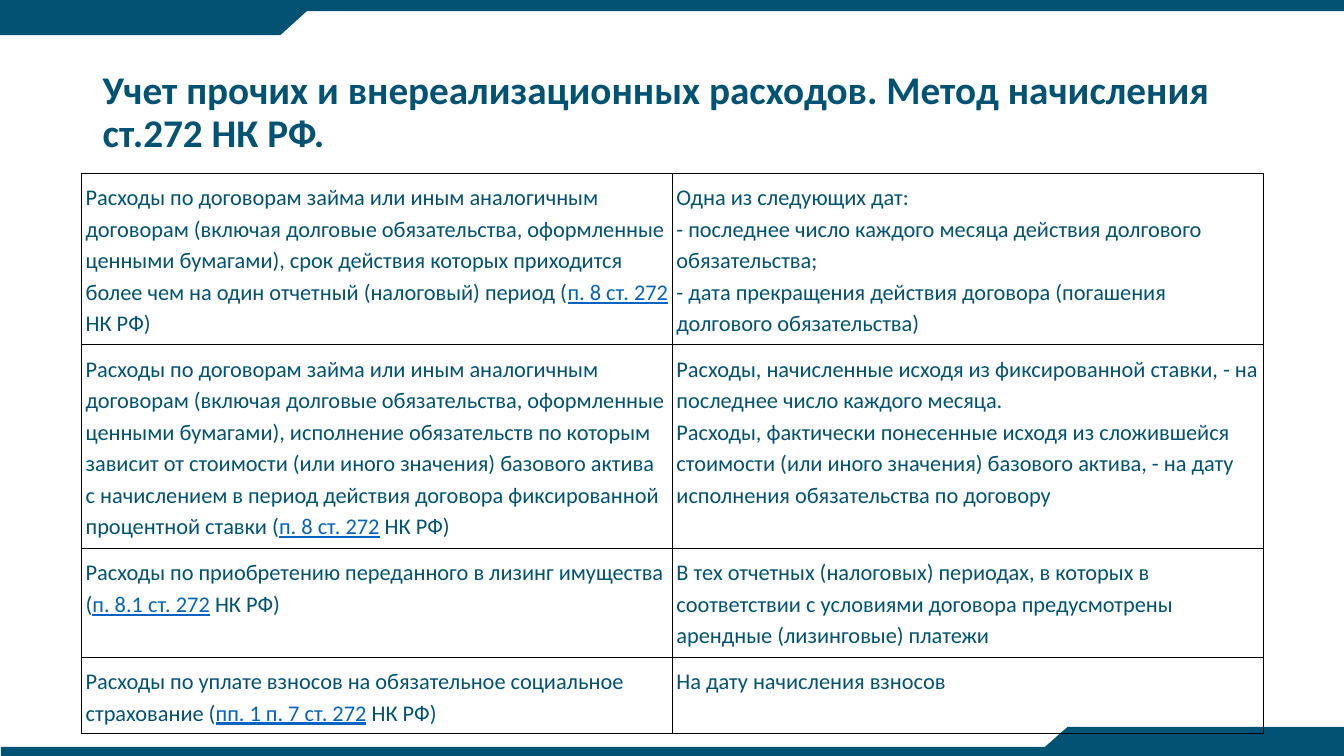
import pptx
import pptx.util
import pptx.dml.color
import pptx.enum.shapes
import pptx.enum.text
import pptx.oxml
import pptx.oxml.ns
from pptx.util import Inches

FONT = "Calibri"
TEAL = "025373"
LINK = "0563C1"
BLACK = "000000"
LINK_TAIL = " НК РФ)"

# Each row: height, expense text, linked article, paragraphs on the recognition date
ROWS = [
    (1.7,
     "Расходы по договорам займа или иным аналогичным договорам (включая долговые "
     "обязательства, оформленные ценными бумагами), срок действия которых приходится "
     "более чем на один отчетный (налоговый) период (",
     "п. 8 ст. 272",
     ["Одна из следующих дат:",
      "- последнее число каждого месяца действия долгового обязательства;",
      "- дата прекращения действия договора (погашения долгового обязательства)"]),
    (2.02,
     "Расходы по договорам займа или иным аналогичным договорам (включая долговые "
     "обязательства, оформленные ценными бумагами), исполнение обязательств по которым "
     "зависит от стоимости (или иного значения) базового актива с начислением в период "
     "действия договора фиксированной процентной ставки (",
     "п. 8 ст. 272",
     ["Расходы, начисленные исходя из фиксированной ставки, - на последнее число "
      "каждого месяца.",
      "Расходы, фактически понесенные исходя из сложившейся стоимости (или иного "
      "значения) базового актива, - на дату исполнения обязательства по договору"]),
    (1.08,
     "Расходы по приобретению переданного в лизинг имущества (",
     "п. 8.1 ст. 272",
     ["В тех отчетных (налоговых) периодах, в которых в соответствии с условиями "
      "договора предусмотрены арендные (лизинговые) платежи"]),
    (0.76,
     "Расходы по уплате взносов на обязательное социальное страхование (",
     "пп. 1 п. 7 ст. 272",
     ["На дату начисления взносов"]),
]


def colour(value):
    return pptx.dml.color.RGBColor.from_string(value)


def style_span(span, size, value=TEAL, bold=False, underline=False):
    span.font.name = FONT
    span.font.size = pptx.util.Pt(size)
    span.font.color.rgb = colour(value)
    span.font.bold = bold
    span.font.underline = underline


def add_block(page, kind, left, top, width, height, rotation=0):
    block = page.shapes.add_shape(
        kind, Inches(left), Inches(top), Inches(width), Inches(height))
    block.rotation = rotation
    block.shadow.inherit = False
    block.fill.solid()
    block.fill.fore_color.rgb = colour(TEAL)
    block.line.fill.background()


def add_bands(page):
    shapes = pptx.enum.shapes.MSO_SHAPE
    # Thin bars along the top and bottom edges
    add_block(page, shapes.RECTANGLE, 0, 0, 13.33, 0.11)
    add_block(page, shapes.RECTANGLE, 0.01, 7.41, 13.32, 0.09)
    # Corner tabs with slanted ends
    add_block(page, shapes.RECTANGLE, 0, 0.05, 2.78, 0.3)
    add_block(page, shapes.FLOWCHART_MERGE, 2.45, 0.05, 0.66, 0.3)
    add_block(page, shapes.RECTANGLE, 10.59, 7.21, 2.74, 0.29)
    add_block(page, shapes.FLOWCHART_MERGE, 10.26, 7.21, 0.66, 0.29, 180)


def add_title(page, text):
    box = page.shapes.add_textbox(Inches(0.92), Inches(0.4), Inches(11.5), Inches(1.45))
    frame = box.text_frame
    frame.word_wrap = True
    frame.vertical_anchor = pptx.enum.text.MSO_ANCHOR.MIDDLE
    frame.text = text
    para = frame.paragraphs[0]
    para.line_spacing = 0.9
    style_span(para.runs[0], 28, bold=True)


def set_borders(cell):
    properties = cell._tc.get_or_add_tcPr()
    for position, side in enumerate(("lnL", "lnR", "lnT", "lnB")):
        border = pptx.oxml.parse_xml(
            f'<a:{side} {pptx.oxml.ns.nsdecls("a")} w="12700"><a:solidFill>'
            f'<a:srgbClr val="{BLACK}"/></a:solidFill></a:{side}>')
        properties.insert(position, border)


def fill_cell(cell, paragraphs):
    """Write paragraphs, each a list of (text, is_link) spans."""
    cell.margin_left = cell.margin_right = Inches(0.04)
    cell.margin_top = cell.margin_bottom = Inches(0.07)
    cell.fill.background()
    set_borders(cell)
    frame = cell.text_frame
    for index, spans in enumerate(paragraphs):
        para = frame.add_paragraph() if index else frame.paragraphs[0]
        para.line_spacing = 1.15
        for text, is_link in spans:
            span = para.add_run()
            span.text = text
            style_span(span, 16, LINK if is_link else TEAL, underline=is_link)


def add_expense_table(page):
    height = sum(row[0] for row in ROWS)
    table = page.shapes.add_table(
        len(ROWS), 2, Inches(0.81), Inches(1.72), Inches(11.72), Inches(height)).table
    table.first_row = False
    table.horz_banding = False
    for index, (row_height, expense, article, dates) in enumerate(ROWS):
        table.rows[index].height = Inches(row_height)
        fill_cell(table.cell(index, 0),
                  [[(expense, False), (article, True), (LINK_TAIL, False)]])
        fill_cell(table.cell(index, 1), [[(date, False)] for date in dates])


def main():
    deck = pptx.Presentation()
    deck.slide_width = Inches(13.33)
    deck.slide_height = Inches(7.5)
    page = deck.slides.add_slide(deck.slide_layouts[6])
    add_bands(page)
    add_title(page, "Учет прочих и внереализационных расходов. "
                    "Метод начисления ст.272 НК РФ.")
    add_expense_table(page)
    deck.save("out.pptx")


if __name__ == "__main__":
    main()
